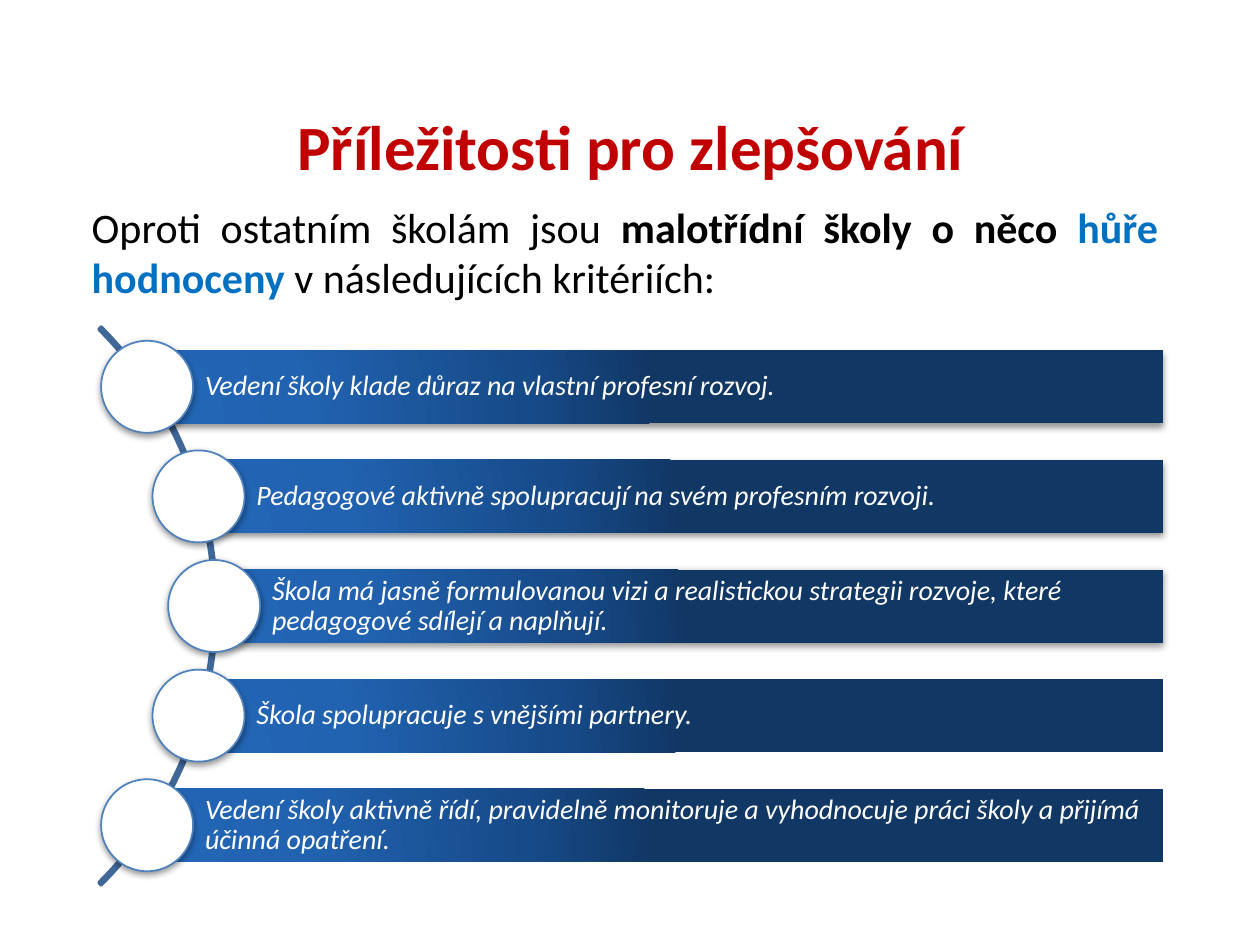
from math import sqrt

from pptx import Presentation
from pptx.dml.color import RGBColor
from pptx.enum.shapes import MSO_SHAPE
from pptx.enum.text import MSO_ANCHOR, PP_ALIGN
from pptx.oxml import parse_xml
from pptx.oxml.ns import nsdecls, qn
from pptx.util import Inches, Pt

FONT = "Calibri"
WHITE = RGBColor(0xFF, 0xFF, 0xFF)
BLACK = RGBColor(0x00, 0x00, 0x00)
RED = RGBColor(0xC0, 0x00, 0x00)
BRIGHT_BLUE = RGBColor(0x00, 0x70, 0xC0)
ARC_BLUE = RGBColor(0x3F, 0x67, 0x97)
CIRCLE_BLUE = RGBColor(0x4F, 0x81, 0xBD)
BAR_STOPS = [
    (0, RGBColor(0x23, 0x67, 0xB8)),
    (30, RGBColor(0x22, 0x63, 0xB1)),
    (75, RGBColor(0x16, 0x4A, 0x88)),
    (100, RGBColor(0x11, 0x37, 0x65)),
]

CRITERIA = [
    "Vedení školy klade důraz na vlastní profesní rozvoj.",
    "Pedagogové aktivně spolupracují na svém profesním rozvoji.",
    "Škola má jasně formulovanou vizi a realistickou strategii rozvoje, které "
    "pedagogové sdílejí a naplňují.",
    "Škola spolupracuje s vnějšími partnery.",
    "Vedení školy aktivně řídí, pravidelně monitoruje a vyhodnocuje práci školy "
    "a přijímá účinná opatření.",
]

ARC_CENTER_X, ARC_CENTER_Y = -1.41, 4.81
ARC_SIZE = 6.26
CIRCLE_ORBIT = 3.11
CIRCLE_SIZE = 0.73
BAR_HEIGHT = 0.58
BAR_RIGHT = 9.23
ROW_PITCH = 0.87


def add_plain_shape(slide, kind, left, top, width, height):
    shape = slide.shapes.add_shape(
        kind, Inches(left), Inches(top), Inches(width), Inches(height))
    shape.shadow.inherit = False
    return shape


def add_soft_shadow(shape):
    effects = shape._element.spPr.find(qn("a:effectLst"))
    effects.append(parse_xml(
        f'<a:outerShdw {nsdecls("a")} blurRad="{Pt(4)}" dist="{Pt(1.6)}" '
        'dir="5400000" rotWithShape="0"><a:srgbClr val="000000">'
        '<a:alpha val="42000"/></a:srgbClr></a:outerShdw>'))


def fill_radial(shape):
    """Fill with the bar gradient, spreading from the lower left."""
    stops = "".join(
        f'<a:gs pos="{position * 1000}"><a:srgbClr val="{color}"/></a:gs>'
        for position, color in BAR_STOPS)
    shape.fill.background()
    properties = shape._element.spPr
    properties.replace(properties.find(qn("a:noFill")), parse_xml(
        f'<a:gradFill {nsdecls("a")} rotWithShape="1"><a:gsLst>{stops}</a:gsLst>'
        '<a:path path="circle"><a:fillToRect l="5000" t="100000" r="120000" '
        'b="10000"/></a:path></a:gradFill>'))


def format_run(run, size, color, bold=False, italic=False):
    run.font.name = FONT
    run.font.size = Pt(size)
    run.font.color.rgb = color
    run.font.bold = bold
    run.font.italic = italic


def add_text(slide, left, top, width, height, runs, size, alignment, anchor):
    """Add a one-paragraph box from (text, color, bold) runs."""
    box = slide.shapes.add_textbox(
        Inches(left), Inches(top), Inches(width), Inches(height))
    frame = box.text_frame
    frame.word_wrap = True
    frame.vertical_anchor = anchor
    paragraph = frame.paragraphs[0]
    paragraph.alignment = alignment
    for text, color, bold in runs:
        run = paragraph.add_run()
        run.text = text
        format_run(run, size, color, bold=bold)


def add_arc(slide):
    arc = add_plain_shape(
        slide, MSO_SHAPE.BLOCK_ARC, ARC_CENTER_X - ARC_SIZE / 2,
        ARC_CENTER_Y - ARC_SIZE / 2, ARC_SIZE, ARC_SIZE)
    for index, value in enumerate((189, 27, 0.004)):
        arc.adjustments[index] = value
    arc.fill.background()
    arc.line.color.rgb = ARC_BLUE
    arc.line.width = Pt(2)


def add_bar(slide, left, center_y, text):
    bar = add_plain_shape(
        slide, MSO_SHAPE.RECTANGLE, left, center_y - BAR_HEIGHT / 2,
        BAR_RIGHT - left, BAR_HEIGHT)
    fill_radial(bar)
    bar.line.fill.background()
    add_soft_shadow(bar)
    frame = bar.text_frame
    frame.text = text
    frame.word_wrap = True
    frame.vertical_anchor = MSO_ANCHOR.MIDDLE
    frame.margin_left = Inches(0.46)
    frame.margin_top = frame.margin_right = frame.margin_bottom = Inches(0.04)
    paragraph = frame.paragraphs[0]
    paragraph.alignment = PP_ALIGN.LEFT
    paragraph.line_spacing = 0.9
    format_run(paragraph.runs[0], 16, WHITE, italic=True)


def add_circle(slide, center_x, center_y):
    circle = add_plain_shape(
        slide, MSO_SHAPE.OVAL, center_x - CIRCLE_SIZE / 2,
        center_y - CIRCLE_SIZE / 2, CIRCLE_SIZE, CIRCLE_SIZE)
    circle.fill.solid()
    circle.fill.fore_color.rgb = WHITE
    circle.line.color.rgb = CIRCLE_BLUE
    circle.line.width = Pt(1)
    add_soft_shadow(circle)


def add_criteria(slide):
    """Place the rows at equal heights, each starting on the arc."""
    middle = (len(CRITERIA) - 1) / 2
    for index, text in enumerate(CRITERIA):
        offset = (index - middle) * ROW_PITCH
        center_x = ARC_CENTER_X + sqrt(CIRCLE_ORBIT ** 2 - offset ** 2)
        center_y = ARC_CENTER_Y + offset
        add_bar(slide, center_x, center_y, text)
        add_circle(slide, center_x, center_y)


def main():
    presentation = Presentation()
    presentation.slide_width = Inches(10)
    presentation.slide_height = Inches(7.5)
    slide = presentation.slides.add_slide(presentation.slide_layouts[6])

    add_arc(slide)
    add_criteria(slide)
    add_text(slide, 0.63, 1.55, 8.66, 0.79, [
        ("Oproti ostatním školám jsou ", BLACK, False),
        ("malotřídní školy o něco ", BLACK, True),
        ("hůře hodnoceny ", BRIGHT_BLUE, True),
        ("v následujících kritériích:", BLACK, False),
    ], 24, PP_ALIGN.JUSTIFY, MSO_ANCHOR.TOP)
    add_text(slide, 0.2, 0.84, 9.61, 0.63,
             [("Příležitosti pro zlepšování", RED, True)],
             36, PP_ALIGN.CENTER, MSO_ANCHOR.MIDDLE)
    presentation.save("out.pptx")


if __name__ == "__main__":
    main()
